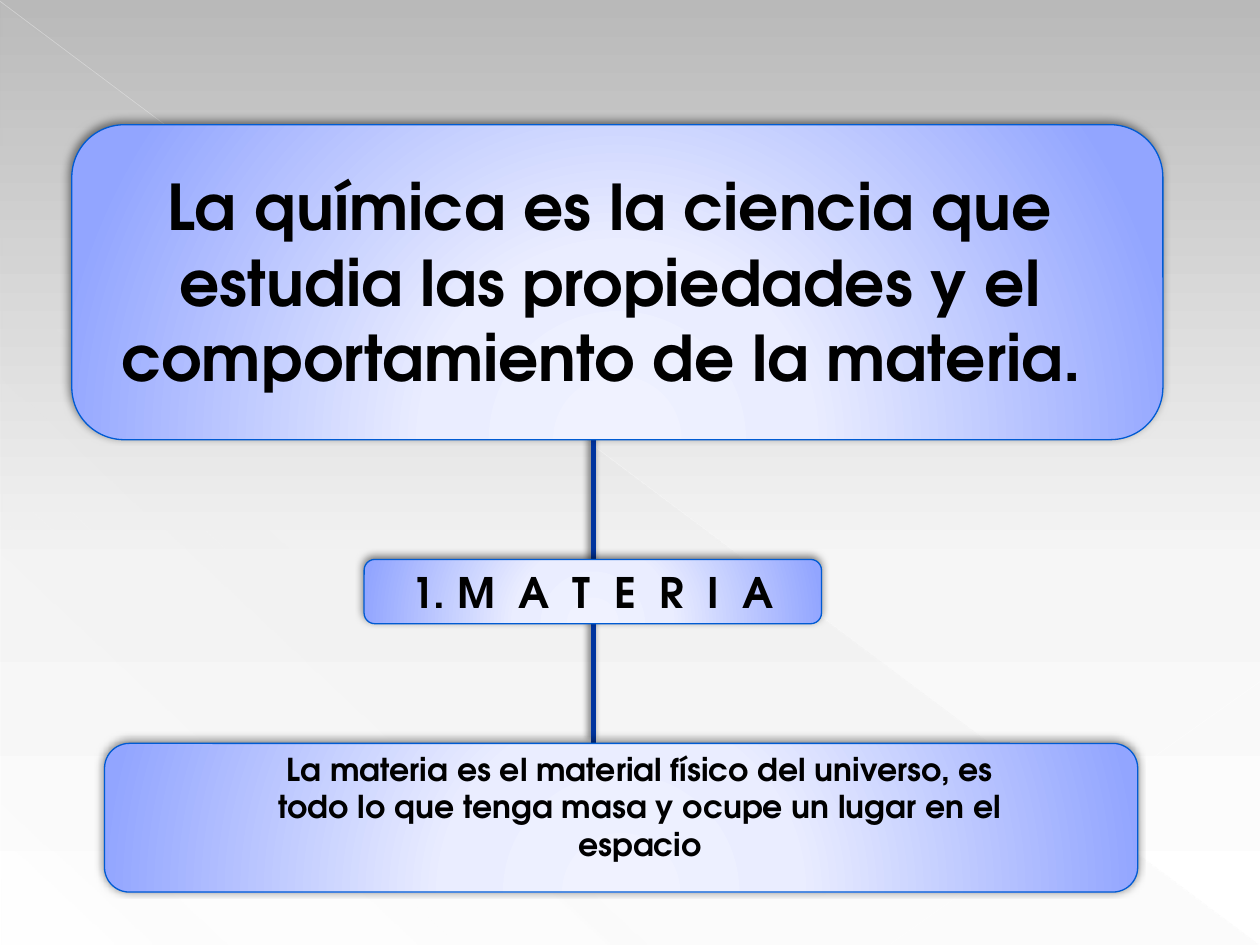
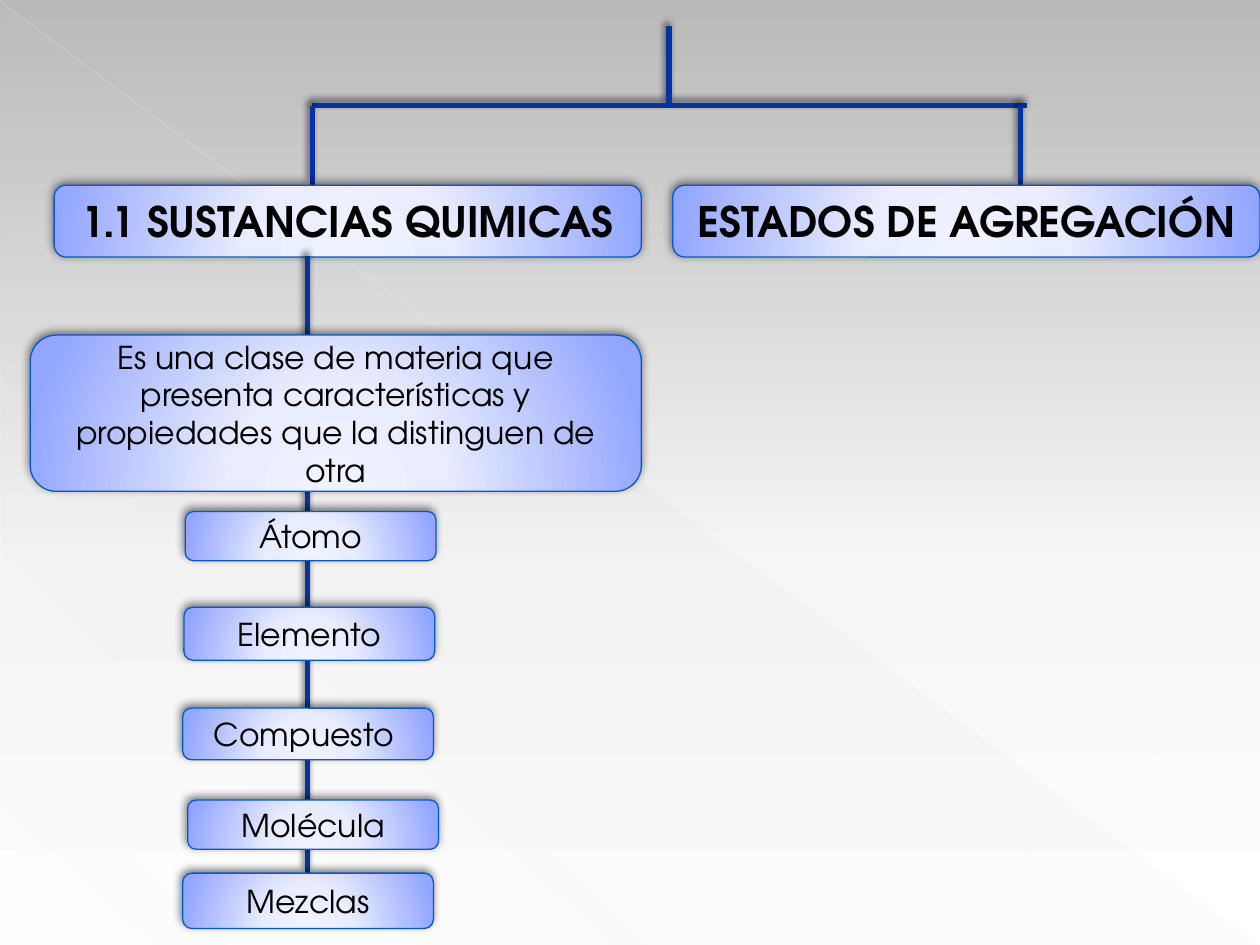
from pptx import Presentation
from pptx.dml.color import RGBColor
from pptx.enum.shapes import MSO_CONNECTOR, MSO_SHAPE
from pptx.enum.text import MSO_ANCHOR, MSO_AUTO_SIZE, PP_ALIGN
from pptx.oxml import parse_xml
from pptx.oxml.ns import nsdecls, qn
from pptx.util import Inches, Pt

ROUNDED, TRIANGLE = MSO_SHAPE.ROUNDED_RECTANGLE, MSO_SHAPE.RIGHT_TRIANGLE
STRAIGHT = MSO_CONNECTOR.STRAIGHT
TOP, MIDDLE = MSO_ANCHOR.TOP, MSO_ANCHOR.MIDDLE
CENTER = PP_ALIGN.CENTER
NO_AUTOFIT = MSO_AUTO_SIZE.NONE

# Grid: 100 columns by 75 rows
WIDTH, HEIGHT = Inches(10), Inches(7.5)
COLUMNS, ROWS = 100, 75
TITLE_ONLY, BLANK = 5, 6

# Gradient stops: position %, colour, opacity %
BACKGROUND = [(0, "B9B9B9", 100), (60, "F6F6F6", 100), (100, "FFFFFF", 100)]
VEIL = [(0, "D2D2D2", 10), (70, "D2D2D2", 8), (100, "D2D2D2", 1)]
BOX = [(0, "F0F2FF", 100), (34, "EAEDFF", 100), (100, "92A5FF", 100)]
GLOW = ('<a:path path="circle">'
        '<a:fillToRect l="50000" t="155000" r="50000" b="-55000"/></a:path>')


def color(hex_text):
    return RGBColor.from_string(hex_text)


def linear(angle):
    return f'<a:lin ang="{angle * 60000}" scaled="0"/>'


def paint(parent, stops, direction):
    """Swap the solid fill of an element for a gradient."""
    stops_xml = "".join(
        f'<a:gs pos="{position * 1000}"><a:srgbClr val="{tone}">'
        f'<a:alpha val="{opacity * 1000}"/></a:srgbClr></a:gs>'
        for position, tone, opacity in stops)
    gradient = parse_xml(f'<a:gradFill {nsdecls("a")} rotWithShape="1">'
                         f'<a:gsLst>{stops_xml}</a:gsLst>{direction}</a:gradFill>')
    parent.replace(parent.find(qn("a:solidFill")), gradient)


def set_effects(properties, opacity=0, blur=0, distance=0):
    """Give an element one black outer shadow, or none at zero opacity."""
    previous = properties.find(qn("a:effectLst"))
    if previous is not None:
        properties.remove(previous)
    shadow = ""
    if opacity:
        shadow = (f'<a:outerShdw blurRad="{Pt(blur)}" dist="{Pt(distance)}" '
                  f'dir="{245 * 60000}" algn="tl" rotWithShape="0">'
                  f'<a:srgbClr val="000000"><a:alpha val="{opacity * 1000}"/>'
                  '</a:srgbClr></a:outerShdw>')
    properties.append(
        parse_xml(f'<a:effectLst {nsdecls("a")}>{shadow}</a:effectLst>'))


class Deck:
    font, ink = "TeX Gyre Adventor", "000000"
    box_edge, link = "005BD3", "00349E"

    def __init__(self):
        self.presentation = Presentation()
        self.presentation.slide_width = WIDTH
        self.presentation.slide_height = HEIGHT
        self.slide = None

    def new_slide(self, layout):
        layouts = self.presentation.slide_layouts
        self.slide = self.presentation.slides.add_slide(layouts[layout])

    def place(self, columns, rows):
        return round(columns * WIDTH / COLUMNS), round(rows * HEIGHT / ROWS)

    def set_text(self, shape, text, size, bold, anchor):
        frame = shape.text_frame
        frame.text = text
        frame.word_wrap = True
        frame.auto_size = NO_AUTOFIT
        frame.vertical_anchor = anchor
        paragraph = frame.paragraphs[0]
        paragraph.alignment = CENTER
        font = paragraph.font
        font.name, font.size, font.bold = self.font, Pt(size), bold
        font.color.rgb = color(self.ink)

    def gradient_shape(self, kind, left, top, width, height, stops, direction):
        shape = self.slide.shapes.add_shape(
            kind, *self.place(left, top), *self.place(width, height))
        shape.shadow.inherit = False
        shape.fill.solid()
        paint(shape.element.spPr, stops, direction)
        return shape

    def box(self, left, top, width, height, text="", size=18, bold=False):
        shape = self.gradient_shape(
            ROUNDED, left, top, width, height, BOX, GLOW)
        shape.line.color.rgb = color(self.box_edge)
        shape.line.width = Pt(0.75)
        set_effects(shape.element.spPr, opacity=50, blur=5, distance=2)
        if text:
            self.set_text(shape, text, size, bold, MIDDLE)

    def title(self, left, top, width, height, text, size):
        title = self.slide.shapes.title
        title.left, title.top = self.place(left, top)
        title.width, title.height = self.place(width, height)
        self.set_text(title, text, size, True, TOP)
        self.slide.shapes.element.append(title.element)  # in front of its box

    def caption(self, left, top, width, height, text, size):
        caption = self.slide.shapes.add_textbox(
            *self.place(left, top), *self.place(width, height))
        self.set_text(caption, text, size, True, TOP)

    def line(self, start, end, tone, weight):
        line = self.slide.shapes.add_connector(
            STRAIGHT, *self.place(*start), *self.place(*end))
        line.line.color.rgb = color(tone)
        line.line.width = Pt(weight)
        set_effects(line.element.spPr)
        return line

    def branch(self, start, end):
        branch = self.line(start, end, self.link, 3)
        set_effects(branch.element.spPr, opacity=60, blur=4, distance=3)

    def hairline(self, start, end, weight, opacity):
        hairline = self.line(start, end, "FFFFFF", weight)
        tone = hairline.element.spPr.find(".//" + qn("a:srgbClr"))
        tone.append(parse_xml(
            f'<a:alpha {nsdecls("a")} val="{opacity * 1000}"/>'))
        return hairline

    def decorate_master(self):
        """Draw the shared backdrop and move it to the slide master."""
        master = self.presentation.slide_master
        master.background.fill.solid()
        paint(master.element.find(".//" + qn("p:bgPr")), BACKGROUND, linear(90))
        veil = self.gradient_shape(
            TRIANGLE, 0.1, 0.2, 99.8, 74.8, VEIL, linear(133))
        veil.line.fill.background()
        backdrop = [veil,
                    self.hairline((0, 0.1), (99.9, 74.9), 0.39, 35),
                    self.hairline((100, 54.1), (70.7, 74.9), 0.47, 45)]
        for number, part in enumerate(backdrop, start=100):
            part.element.find(".//" + qn("p:cNvPr")).set("id", str(number))
            master.shapes.element.append(part.element)


def chemistry_slide(deck):
    stem = 47.1
    deck.branch((stem, 34.9), (stem, 59))
    deck.box(5.7, 9.9, 86.6, 25)
    deck.title(5.1, 12.8, 86.6, 19.2,
               "La química es la ciencia que estudia las propiedades "
               "y el comportamiento de la materia. ", 36)
    deck.box(8.3, 59, 82, 11.8)
    deck.caption(19.3, 59, 63, 10.1,
                 "La materia es el material físico del universo, es todo "
                 "lo que tenga masa y ocupe un lugar en el espacio", 18)
    deck.box(28.9, 44.4, 36.3, 5.1, "1. M  A  T  E  R  I  A", 24, True)


def substances_slide(deck):
    # Fork to the two topics
    fork, topics_top = 8.4, 14.7
    deck.branch((24.8, fork), (81.5, fork))
    for drop in (24.8, 81):
        deck.branch((drop, fork), (drop, topics_top))
    for left, topic in ((4.3, "1.1 SUSTANCIAS QUIMICAS"),
                        (53.4, "ESTADOS DE AGREGACIÓN")):
        deck.box(left, topics_top, 46.6, 5.7, topic, 24, True)
    deck.branch((53.1, 2.1), (53.1, fork))

    # Definition and chain of substances
    deck.branch((24.4, 20.3), (24.4, 69.3))
    deck.box(2.4, 26.6, 48.5, 12.4,
             "Es una clase de materia que presenta características "
             "y propiedades que la distinguen de otra")
    for substance, left, top, height in (("Átomo", 14.7, 40.6, 3.9),
                                         ("Elemento", 14.6, 48.2, 4.2),
                                         ("Compuesto ", 14.5, 56.2, 4.1),
                                         ("Molécula", 14.9, 63.5, 3.9),
                                         ("Mezclas", 14.5, 69.3, 4.4)):
        deck.box(left, top, 19.9, height, substance)


def main():
    deck = Deck()
    deck.new_slide(TITLE_ONLY)
    deck.decorate_master()
    chemistry_slide(deck)
    deck.new_slide(BLANK)
    substances_slide(deck)
    deck.presentation.save("out.pptx")


if __name__ == "__main__":
    main()
